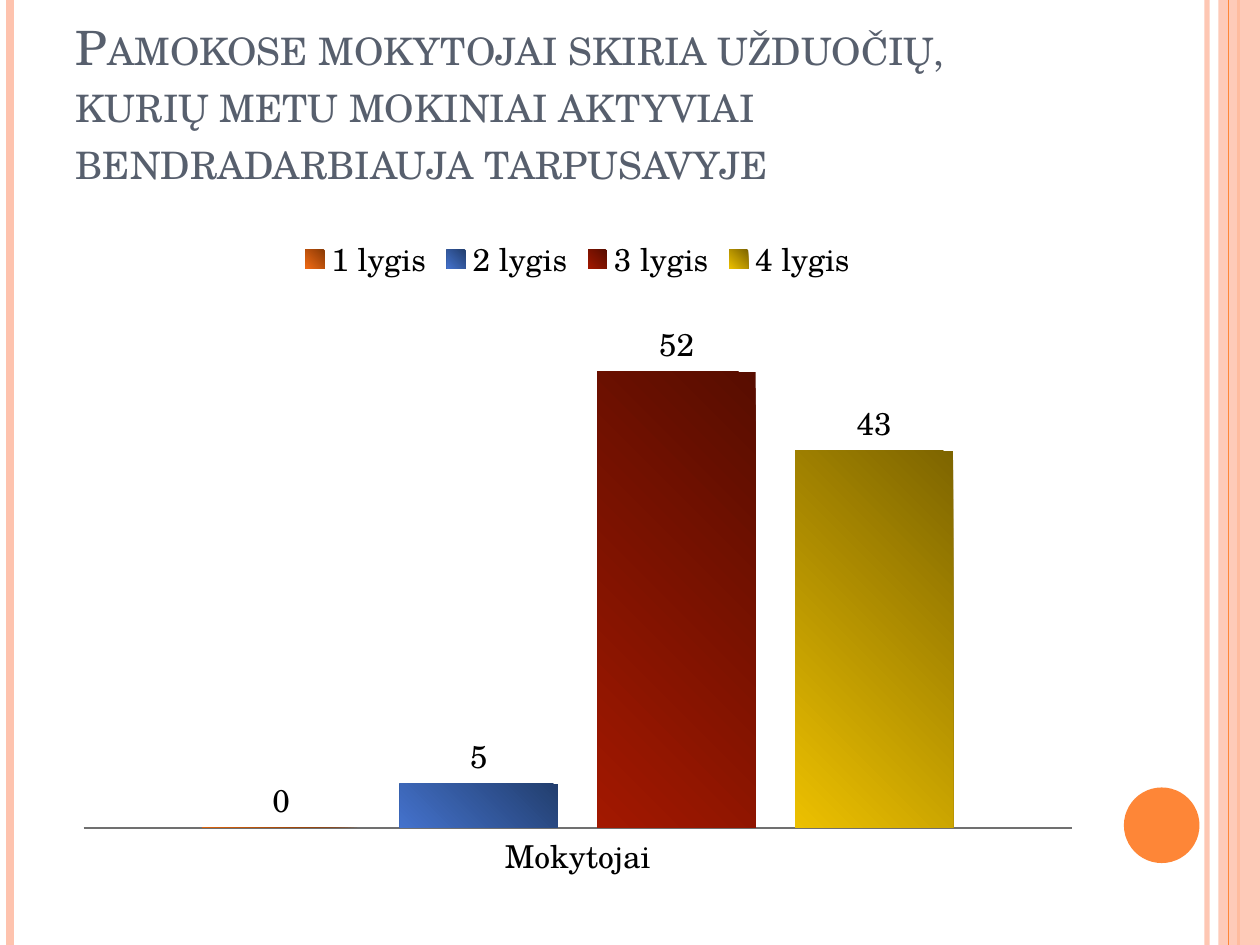
import pptx
import pptx.chart.data
import pptx.dml.color
import pptx.enum.chart
import pptx.enum.shapes
import pptx.enum.text
import pptx.oxml
import pptx.oxml.ns
import pptx.util
from lxml import etree

RGBColor = pptx.dml.color.RGBColor
Inches = pptx.util.Inches
Pt = pptx.util.Pt
qn = pptx.oxml.ns.qn

FONT = "TeX Gyre Schola"
PEACH = RGBColor(0xFE, 0xC3, 0xAE)
ORANGE = RGBColor(0xFE, 0x86, 0x37)
SLATE = RGBColor(0x57, 0x5F, 0x6D)
BLACK = RGBColor(0, 0, 0)
GRAY = RGBColor(0x70, 0x70, 0x70)
LEVELS = [
    ("1 lygis", 0, RGBColor(0xF0, 0x6A, 0x14), RGBColor(0x8A, 0x3A, 0x05)),
    ("2 lygis", 5, RGBColor(0x44, 0x72, 0xCC), RGBColor(0x22, 0x3E, 0x6E)),
    ("3 lygis", 52, RGBColor(0xA2, 0x18, 0x00), RGBColor(0x58, 0x0D, 0x00)),
    ("4 lygis", 43, RGBColor(0xEC, 0xC0, 0x00), RGBColor(0x7E, 0x65, 0x00)),
]

presentation = pptx.Presentation()
presentation.slide_width = Inches(10)
presentation.slide_height = Inches(7.5)
width, height = presentation.slide_width, presentation.slide_height
slide = presentation.slides.add_slide(presentation.slide_layouts[5])
shapes = slide.shapes
left, content_width = int(width * 0.05), Inches(8.17)


def set_alpha(fill_parent, percent):
    color = next(fill_parent.iter(qn("a:srgbClr")))
    etree.SubElement(color, qn("a:alpha")).set("val", str(percent * 1000))


def add_stripe(x, color, weight):
    stripe = shapes.add_connector(
        pptx.enum.shapes.MSO_CONNECTOR.STRAIGHT, Inches(x), 0, Inches(x), height)
    stripe.line.color.rgb = color
    stripe.line.width = Pt(weight)
    etree.SubElement(stripe._element.spPr, qn("a:effectLst"))
    return stripe


set_alpha(add_stripe(9.58, PEACH, 3)._element.spPr, 93)
add_stripe(0.08, PEACH, 4.5)
add_stripe(9.83, ORANGE, 1.5)

band = shapes.add_shape(
    pptx.enum.shapes.MSO_SHAPE.RECTANGLE, Inches(9.67), 0, Inches(0.33), height)
add_stripe(9.75, ORANGE, 0.75)
circle = shapes.add_shape(
    pptx.enum.shapes.MSO_SHAPE.OVAL, Inches(8.92), Inches(6.25), Inches(0.6), Inches(0.6))
for shape, color in ((band, PEACH), (circle, ORANGE)):
    shape.shadow.inherit = False
    shape.fill.solid()
    shape.fill.fore_color.rgb = color
    shape.line.fill.background()
set_alpha(band._element.spPr, 87)

title = shapes.title
title.left, title.top = left, int(height * 0.04)
title.width, title.height = content_width, Inches(1.25)
frame = title.text_frame
frame.word_wrap = True
frame.auto_size = pptx.enum.text.MSO_AUTO_SIZE.NONE
frame.vertical_anchor = pptx.enum.text.MSO_ANCHOR.BOTTOM
paragraph = frame.paragraphs[0]
paragraph.alignment = pptx.enum.text.PP_ALIGN.LEFT
run = paragraph.add_run()
run.text = ("Pamokose mokytojai skiria užduočių, kurių metu mokiniai "
            "aktyviai bendradarbiauja tarpusavyje")
run.font.name = FONT
run.font.size = Pt(27)
run.font.color.rgb = SLATE
run.font._element.set("cap", "small")

chart_data = pptx.chart.data.CategoryChartData()
chart_data.categories = ["Mokytojai"]
for name, value, inner, outer in LEVELS:
    chart_data.add_series(name, [value])
chart = shapes.add_chart(
    pptx.enum.chart.XL_CHART_TYPE.COLUMN_CLUSTERED,
    left, Inches(1.75), content_width, Inches(5.33), chart_data).chart
chart.has_title = False
chart.font.name = FONT
chart.font.size = Pt(18)
chart.font.color.rgb = BLACK
chart.has_legend = True
chart.legend.position = pptx.enum.chart.XL_LEGEND_POSITION.TOP
chart.legend.include_in_layout = False

chart.category_axis.major_tick_mark = pptx.enum.chart.XL_TICK_MARK.NONE
chart.category_axis.format.line.color.rgb = GRAY
chart.category_axis.format.line.width = Pt(1)
chart.value_axis.visible = False
chart.value_axis.has_major_gridlines = False
chart.value_axis.minimum_scale = 0
chart.value_axis.maximum_scale = 60

plot = chart.plots[0]
plot.vary_by_categories = False
plot.gap_width = 150
plot.overlap = -25
plot.has_data_labels = True
plot.data_labels.show_value = True
plot.data_labels.position = pptx.enum.chart.XL_LABEL_POSITION.OUTSIDE_END
for series, (name, value, inner, outer) in zip(plot.series, LEVELS):
    series.invert_if_negative = False
    fill = series.format.fill
    fill.gradient()
    for stop, color in zip(fill.gradient_stops, (inner, outer)):
        stop.color.rgb = color
    direction = next(series._element.iter(qn("a:lin")))
    radial = etree.Element(qn("a:path"), {"path": "circle"})
    etree.SubElement(radial, qn("a:fillToRect"), {"t": "100000", "r": "100000"})
    direction.getparent().replace(direction, radial)

presentation.save("out.pptx")
